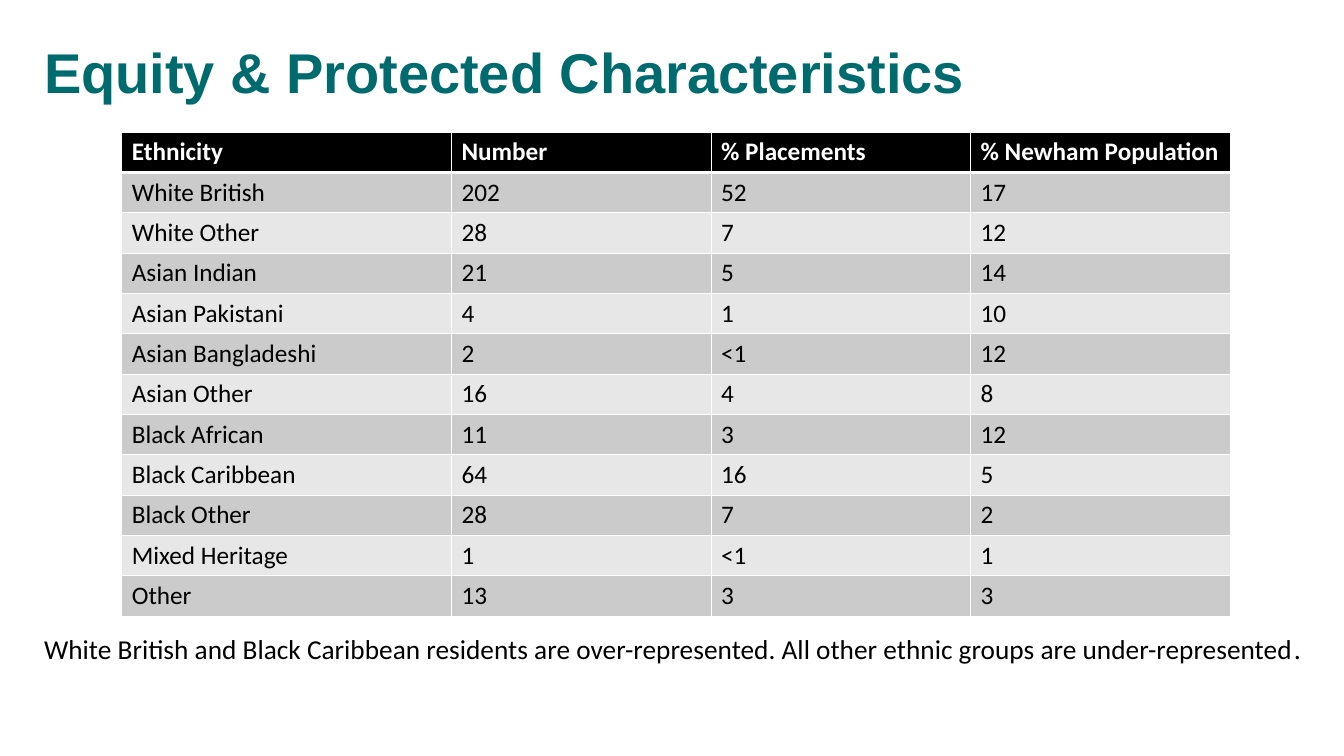
"""Build a slide comparing placements with population by ethnicity."""
import pptx
import pptx.dml.color
import pptx.enum.text
import pptx.oxml
import pptx.oxml.ns
import pptx.util

Cm = pptx.util.Cm
Pt = pptx.util.Pt
RGBColor = pptx.dml.color.RGBColor
ANCHOR = pptx.enum.text.MSO_ANCHOR

TEAL = RGBColor(0x00, 0x6B, 0x6F)
BLACK = RGBColor(0x00, 0x00, 0x00)
WHITE = RGBColor(0xFF, 0xFF, 0xFF)
DARK_BAND = RGBColor(0xCB, 0xCB, 0xCB)
LIGHT_BAND = RGBColor(0xE7, 0xE7, 0xE7)

TITLE = "Equity & Protected Characteristics"
SUMMARY = (
    "White British and Black Caribbean residents are over-represented. "
    "All other ethnic groups are under-represented"
)
ROWS = [
    ("Ethnicity", "Number", "% Placements", "% Newham Population"),
    ("White British", "202", "52", "17"),
    ("White Other", "28", "7", "12"),
    ("Asian Indian", "21", "5", "14"),
    ("Asian Pakistani", "4", "1", "10"),
    ("Asian Bangladeshi", "2", "<1", "12"),
    ("Asian Other", "16", "4", "8"),
    ("Black African", "11", "3", "12"),
    ("Black Caribbean", "64", "16", "5"),
    ("Black Other", "28", "7", "2"),
    ("Mixed Heritage", "1", "<1", "1"),
    ("Other", "13", "3", "3"),
]
COLUMN_WIDTHS = [Cm(8.31), Cm(6.54), Cm(6.54), Cm(6.54)]
ROW_HEIGHT = Cm(1.016)
THIN, THICK = Pt(0.65), Pt(1.94)


def add_text(p, text, size=18, font="Calibri", color=BLACK, bold=False):
    r = p.add_run()
    r.text = text
    r.font.size = Pt(size)
    r.font.name = font
    r.font.color.rgb = color
    r.font.bold = bold


def add_box(s, left, top, width, height, anchor=ANCHOR.TOP):
    tf = s.shapes.add_textbox(left, top, width, height).text_frame
    tf.word_wrap = True
    tf.vertical_anchor = anchor
    return tf.paragraphs[0]


def add_borders(cell, top, bottom):
    tc_pr = cell._tc.get_or_add_tcPr()
    for side, width in (("L", THIN), ("R", THIN), ("T", top), ("B", bottom)):
        tc_pr.append(pptx.oxml.parse_xml(
            f'<a:ln{side} {pptx.oxml.ns.nsdecls("a")} w="{int(width)}">'
            f'<a:solidFill><a:srgbClr val="{WHITE}"/></a:solidFill></a:ln{side}>'
        ))


def add_ethnicity_table(s):
    table = s.shapes.add_table(
        len(ROWS), len(COLUMN_WIDTHS), Cm(3.07), Cm(3.33),
        sum(COLUMN_WIDTHS), ROW_HEIGHT * len(ROWS),
    ).table
    for column, width in zip(table.columns, COLUMN_WIDTHS):
        column.width = width
    for i, values in enumerate(ROWS):
        table.rows[i].height = ROW_HEIGHT
        header = i == 0
        fill = BLACK if header else DARK_BAND if i % 2 else LIGHT_BAND
        for j, value in enumerate(values):
            cell = table.cell(i, j)
            cell.margin_top = cell.margin_bottom = Cm(0.12)
            add_borders(cell, THICK if i == 1 else THIN, THICK if header else THIN)
            cell.fill.solid()
            cell.fill.fore_color.rgb = fill
            add_text(cell.text_frame.paragraphs[0], value,
                     color=WHITE if header else BLACK, bold=header)


def main():
    prs = pptx.Presentation()
    prs.slide_width, prs.slide_height = Cm(33.87), Cm(19.05)
    s = prs.slides.add_slide(prs.slide_layouts[6])

    p = add_box(s, Cm(0.86), Cm(0), Cm(26.26), Cm(2.79), ANCHOR.BOTTOM)
    p.line_spacing = 0.9
    add_text(p, TITLE, size=40, font="Arial", color=TEAL, bold=True)

    p = add_box(s, Cm(0.86), Cm(15.8), Cm(33.43), Cm(1.12))
    add_text(p, SUMMARY, size=19.5)
    add_text(p, ".", size=20)

    add_ethnicity_table(s)
    prs.save("out.pptx")


if __name__ == "__main__":
    main()
